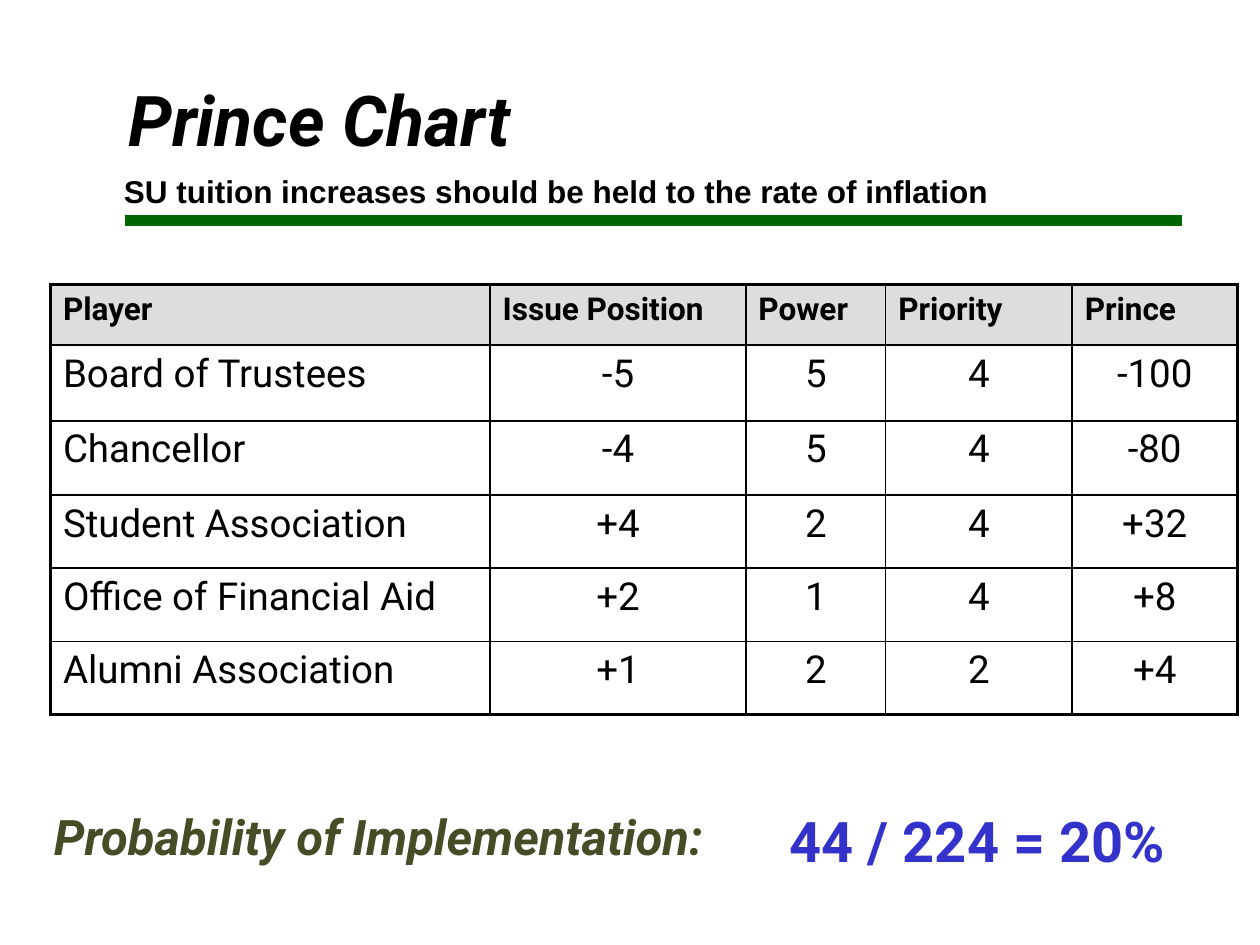
from lxml import etree
from pptx import Presentation
from pptx.dml.color import RGBColor
from pptx.enum.shapes import MSO_CONNECTOR
from pptx.enum.text import PP_ALIGN
from pptx.oxml.ns import qn
from pptx.util import Inches, Pt

LEFT = PP_ALIGN.LEFT
CENTER = PP_ALIGN.CENTER
STRAIGHT = MSO_CONNECTOR.STRAIGHT

BLACK = RGBColor(0x00, 0x00, 0x00)
GREEN = RGBColor(0x00, 0x66, 0x00)
OLIVE = RGBColor(0x44, 0x4D, 0x26)
BLUE = RGBColor(0x33, 0x33, 0xCC)
GRAY = RGBColor(0xDD, 0xDD, 0xDD)

HEADINGS = ["Player", "Issue Position", "Power", "Priority", "Prince"]
PLAYERS = [
    ["Board of Trustees", "-5", "5", "4", "-100"],
    ["Chancellor", "-4", "5", "4", "-80"],
    ["Student Association", "+4", "2", "4", "+32"],
    ["Office of Financial Aid", "+2", "1", "4", "+8"],
    ["Alumni Association", "+1", "2", "2", "+4"],
]
COLUMN_WIDTHS = [3.49, 2.03, 1.11, 1.48, 1.31]
ROW_HEIGHTS = [0.48, 0.6, 0.59, 0.58, 0.58, 0.58]
OUTER_BORDER = 2.25
INNER_BORDER = 1


def style_paragraph(paragraph, text, size, color=BLACK, name="Roboto",
                    bold=True, italic=False, alignment=LEFT):
    paragraph.text = text
    paragraph.alignment = alignment
    font = paragraph.font
    font.name = name
    font.size = Pt(size)
    font.bold = bold
    font.italic = italic
    font.color.rgb = color


def add_text(slide, box, text, size, wrap=True, **style):
    shape = slide.shapes.add_textbox(*map(Inches, box))
    shape.text_frame.word_wrap = wrap
    style_paragraph(shape.text_frame.paragraphs[0], text, size, **style)


def add_header(slide, left, top):
    rule = slide.shapes.add_connector(
        STRAIGHT, Inches(left + 0.24), Inches(top + 1.19),
        Inches(left + 8.63), Inches(top + 1.19))
    rule.line.color.rgb = GREEN
    rule.line.width = Pt(6)
    etree.SubElement(rule._element.spPr, qn("a:effectLst"))
    add_text(slide, (left + 0.17, top, 8.08, 0.77), "Prince Chart", 40, italic=True)
    add_text(slide, (left, top + 0.76, 7.33, 0.4),
             "SU tuition increases should be held to the rate of inflation",
             18, name="Arial", alignment=CENTER)


def set_borders(cell, widths):
    properties = cell._tc.get_or_add_tcPr()
    for index, (side, width) in enumerate(widths.items()):
        line = etree.Element(qn(f"a:ln{side}"), w=str(Pt(width)))
        fill = etree.SubElement(line, qn("a:solidFill"))
        etree.SubElement(fill, qn("a:srgbClr"), val=str(BLACK))
        properties.insert(index, line)


def add_player_table(slide, left, top):
    rows = [HEADINGS] + PLAYERS
    last_row, last_column = len(rows) - 1, len(HEADINGS) - 1
    frame = slide.shapes.add_table(
        len(rows), len(HEADINGS), Inches(left), Inches(top),
        Inches(sum(COLUMN_WIDTHS)), Inches(sum(ROW_HEIGHTS)))
    table = frame.table
    for column, width in zip(table.columns, COLUMN_WIDTHS):
        column.width = Inches(width)
    for row, height in zip(table.rows, ROW_HEIGHTS):
        row.height = Inches(height)
    for row_index, values in enumerate(rows):
        is_heading = row_index == 0
        for column_index, value in enumerate(values):
            cell = table.cell(row_index, column_index)
            if is_heading:
                cell.fill.solid()
                cell.fill.fore_color.rgb = GRAY
            else:
                cell.fill.background()
            style_paragraph(
                cell.text_frame.paragraphs[0], value, 18 if is_heading else 22,
                bold=is_heading,
                alignment=LEFT if is_heading or column_index == 0 else CENTER)
            at_edge = {"L": column_index == 0, "R": column_index == last_column,
                       "T": is_heading, "B": row_index == last_row}
            set_borders(cell, {side: OUTER_BORDER if edge else INNER_BORDER
                               for side, edge in at_edge.items()})


def add_probability(slide, left, top):
    add_text(slide, (left, top, 5.89, 0.57), "Probability of Implementation:",
             28, wrap=False, color=OLIVE, italic=True)
    add_text(slide, (left + 5.84, top, 3.83, 0.63), "44 / 224 = 20%", 32, color=BLUE)


def main():
    presentation = Presentation()
    presentation.slide_width = Inches(10)
    presentation.slide_height = Inches(7.5)
    slide = presentation.slides.add_slide(presentation.slide_layouts[6])
    add_header(slide, 0.75, 0.56)
    add_player_table(slide, 0.4, 2.26)
    add_probability(slide, 0.33, 6.35)
    presentation.save("out.pptx")


if __name__ == "__main__":
    main()
